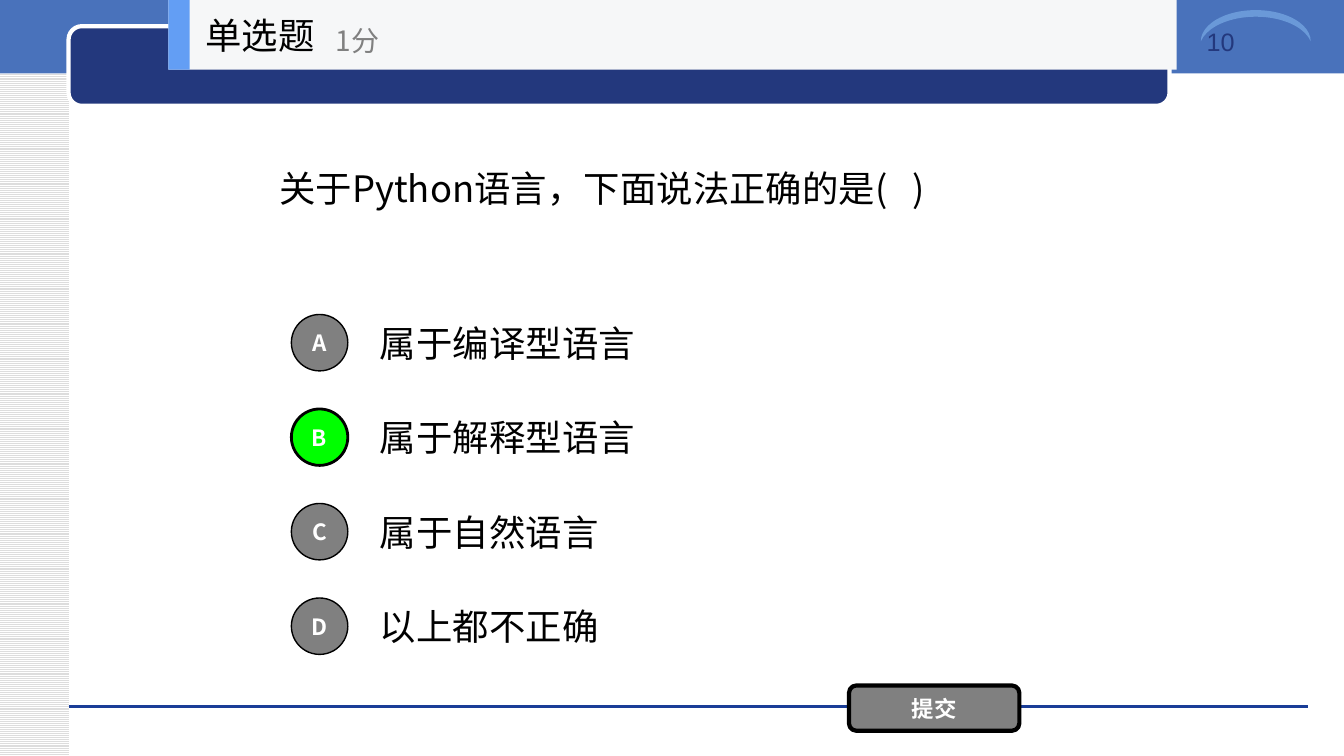
from lxml import etree
from pptx import Presentation
from pptx.dml.color import RGBColor
from pptx.enum.dml import MSO_PATTERN
from pptx.enum.shapes import MSO_CONNECTOR, MSO_SHAPE
from pptx.enum.text import MSO_ANCHOR, MSO_AUTO_SIZE, PP_ALIGN
from pptx.oxml.ns import qn
from pptx.util import Inches, Pt

RECTANGLE, ROUNDED = MSO_SHAPE.RECTANGLE, MSO_SHAPE.ROUNDED_RECTANGLE
OVAL, MOON = MSO_SHAPE.OVAL, MSO_SHAPE.MOON
LEFT, CENTER = PP_ALIGN.LEFT, PP_ALIGN.CENTER
TOP, MIDDLE = MSO_ANCHOR.TOP, MSO_ANCHOR.MIDDLE

QUESTION = "关于Python语言，下面说法正确的是(   )"
OPTIONS = [
    ("A", "属于编译型语言"),
    ("B", "属于解释型语言"),
    ("C", "属于自然语言"),
    ("D", "以上都不正确"),
]
CORRECT = "B"
KIND, SCORE, SUBMIT, PAGE = "单选题", "1分", "提交", "10"

WIDTH, HEIGHT = 13.33, 7.5
MARGIN = 0.68
HEADER_LEFT, HEADER_HEIGHT = 1.67, 0.69
OPTION_TOP, OPTION_STEP, OPTION_HEIGHT = 3.05, 0.9375, 0.7
BADGE = 0.56
CJK_FONT = "Noto Sans CJK SC"
BLACK, WHITE, GRAY, GREEN, NAVY = "000000", "FFFFFF", "808080", "00FF00", "23387D"


def color(value):
    return RGBColor.from_string(value)


def write(shape, text, size, text_color, bold=False, align=LEFT, anchor=MIDDLE,
          wrap=True, font_name=CJK_FONT):
    frame = shape.text_frame
    frame.text = text
    frame.word_wrap = wrap
    frame.auto_size = MSO_AUTO_SIZE.NONE
    frame.vertical_anchor = anchor
    paragraph = frame.paragraphs[0]
    paragraph.alignment = align
    font = paragraph.runs[0].font
    font.size, font.bold, font.name = Pt(size), bold, font_name
    font.color.rgb = color(text_color)
    latin = font._element.find(qn("a:latin"))
    east_asian = etree.Element(qn("a:ea"), typeface=font_name)
    latin.addnext(east_asian)


def add_shape(kind, box, fill, line=None, line_width=1):
    shape = slide.shapes.add_shape(kind, *map(Inches, box))
    shape.shadow.inherit = False
    shape.fill.solid()
    shape.fill.fore_color.rgb = color(fill)
    if line:
        shape.line.color.rgb = color(line)
        shape.line.width = Pt(line_width)
    else:
        shape.line.fill.background()
    return shape


def add_text(box, text, size, text_color=BLACK, **style):
    write(slide.shapes.add_textbox(*map(Inches, box)), text, size, text_color, **style)


def add_button(kind, box, text, fill, line_width):
    button = add_shape(kind, box, fill, BLACK, line_width)
    button.text_frame.margin_left = button.text_frame.margin_right = 0
    write(button, text, 16, WHITE, bold=True, align=CENTER)


def add_background():
    stripes = add_shape(RECTANGLE, (0, 0, MARGIN, HEIGHT), WHITE)
    stripes.fill.patterned()
    stripes.fill.pattern = MSO_PATTERN.LIGHT_HORIZONTAL
    stripes.fill.fore_color.rgb = color("DDDDDD")
    stripes.fill.back_color.rgb = color(WHITE)
    add_shape(RECTANGLE, (0, 0, WIDTH, 0.73), "4972BB")
    footer_line = slide.shapes.add_connector(
        MSO_CONNECTOR.STRAIGHT, *map(Inches, (MARGIN, 7.01, 12.97, 7.01)))
    footer_line.line.color.rgb = color("1A3D97")
    footer_line.line.width = Pt(0)
    etree.SubElement(footer_line._element.spPr, qn("a:effectLst"))
    add_shape(ROUNDED, (MARGIN, 0.26, 10.92, 0.79), NAVY, WHITE, 3)
    moon = add_shape(MOON, (12.3, -0.29, 0.31, 1.09), "6A99D8")
    moon.adjustments[0] = 0.212
    moon.rotation = 90
    add_text((11.87, 0.21, 1.21, 0.71), PAGE, 18, NAVY, anchor=TOP, font_name="Arial")


def add_question():
    title = slide.shapes.title
    title.left, title.top, title.width, title.height = map(Inches, (2.67, 0.69, 8, 2.34))
    write(title, QUESTION, 26, BLACK)
    for row, (letter, answer) in enumerate(OPTIONS):
        top = OPTION_TOP + row * OPTION_STEP
        add_text((3.67, top, 7, OPTION_HEIGHT), answer, 26)
        is_correct = letter == CORRECT
        badge_top = top + (OPTION_HEIGHT - BADGE) / 2
        add_button(OVAL, (2.89, badge_top, BADGE, BADGE), letter,
                   GREEN if is_correct else GRAY, 2 if is_correct else 1)
    add_button(ROUNDED, (8.42, 6.8, 1.69, 0.45), SUBMIT, GRAY, 3)


def add_header():
    add_shape(RECTANGLE, (HEADER_LEFT, 0, 10, HEADER_HEIGHT), "F6F7F8")
    add_shape(RECTANGLE, (HEADER_LEFT, 0, 0.21, HEADER_HEIGHT), "639EF4")
    add_text((1.94, 0, 2.08, HEADER_HEIGHT), KIND, 26, wrap=False)
    add_text((3.23, 0.12, 2.5, 0.56), SCORE, 20, GRAY, wrap=False)


presentation = Presentation()
presentation.slide_width, presentation.slide_height = Inches(WIDTH), Inches(HEIGHT)
slide = presentation.slides.add_slide(presentation.slide_layouts[5])
add_background()
add_question()
add_header()
presentation.save("out.pptx")
